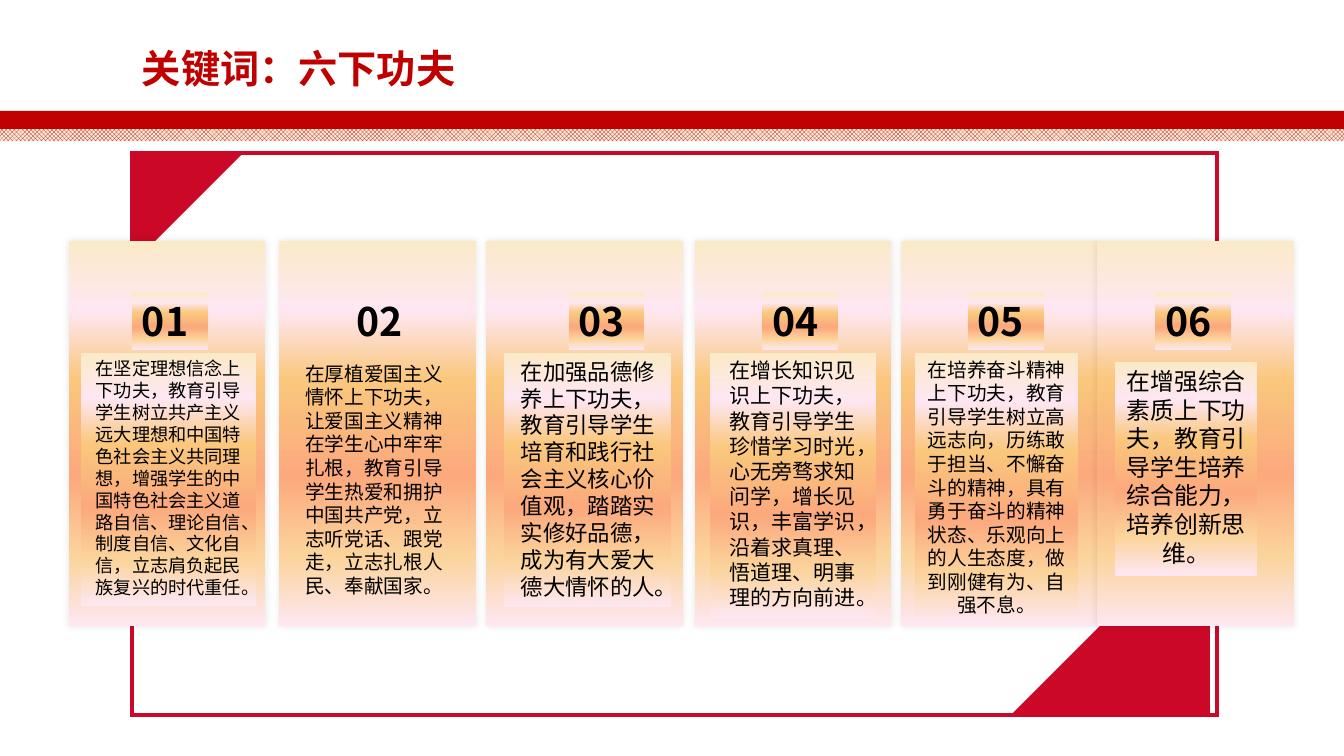
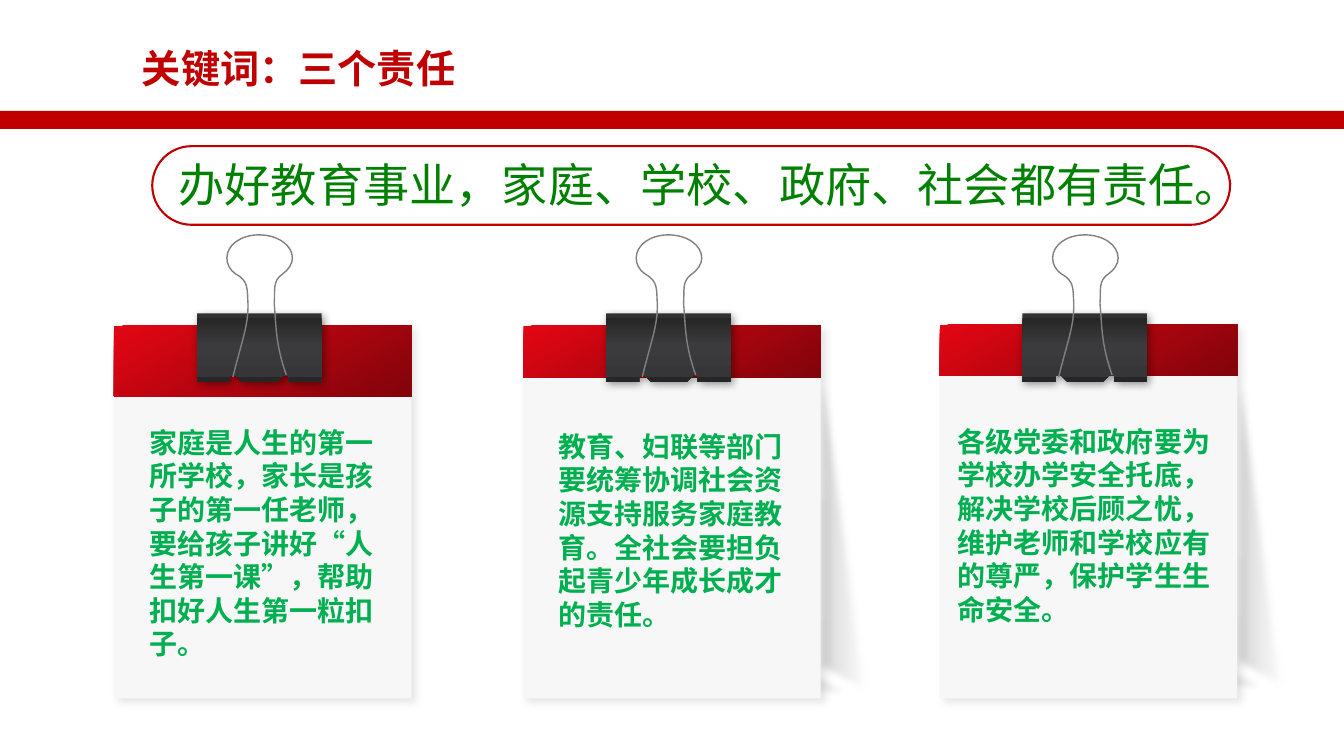
from lxml.etree import SubElement
from pptx import Presentation
from pptx.dml.color import RGBColor
from pptx.enum.dml import MSO_PATTERN
from pptx.enum.shapes import MSO_SHAPE
from pptx.enum.text import MSO_ANCHOR, MSO_AUTO_SIZE, PP_ALIGN
from pptx.oxml.ns import qn
from pptx.util import Inches, Pt

RED = RGBColor(0xC0, 0x00, 0x00)
CRIMSON = RGBColor(0xCB, 0x08, 0x28)
CREAM = RGBColor(0xF7, 0xED, 0xD8)
PAPER = RGBColor(0xF7, 0xF7, 0xF7)
GRAY = RGBColor(0x80, 0x80, 0x80)
PALE = RGBColor(0xF3, 0xF3, 0xF3)
BLACK = RGBColor(0x00, 0x00, 0x00)
GREEN = RGBColor(0x00, 0xB0, 0x50)
DARK_GREEN = RGBColor(0x00, 0x80, 0x00)

PEACH = RGBColor(0xFE, 0xE7, 0xF2)
SUNSET = [
    (0, RGBColor(0xFB, 0xEA, 0xC7)),
    (18, PEACH),
    (36, RGBColor(0xFA, 0xC7, 0x7D)),
    (61, RGBColor(0xFB, 0xA9, 0x7D)),
    (82, RGBColor(0xFB, 0xD4, 0x9C)),
    (100, PEACH),
]
HEADER = [(0, RGBColor(0xE3, 0x06, 0x13)), (100, RGBColor(0x81, 0x04, 0x0B))]
CHARCOAL = RGBColor(0x26, 0x26, 0x26)
METAL = [
    (7, RGBColor(0x31, 0x31, 0x32)),
    (7, CHARCOAL),
    (46, RGBColor(0x3B, 0x3B, 0x3D)),
    (93, RGBColor(0x36, 0x36, 0x38)),
    (93, CHARCOAL),
]
SHADE = [(0, PALE, 12), (100, GRAY, 44)]

CLIP = [
    (0, 0), (1.24, 0), (1.24, 0.68), (0.91, 0.68), (0.91, 0.62), (0.86, 0.62),
    (0.8, 0.68), (0.45, 0.68), (0.39, 0.62), (0.33, 0.62), (0.33, 0.68), (0, 0.68),
]
WIRE_START = (0.06, 1.41)
WIRE_CURVES = [
    ((0.16, 1.01), (0.21, 0.91), (0.21, 0.69)),
    ((0.2, 0.54), (0.22, 0.46), (0.09, 0.39)),
    ((0.03, 0.35), (0, 0.29), (0, 0.23)),
    ((0, 0.1), (0.14, 0), (0.32, 0)),
    ((0.5, 0), (0.65, 0.1), (0.65, 0.23)),
    ((0.65, 0.29), (0.61, 0.35), (0.55, 0.39)),
    ((0.45, 0.46), (0.48, 0.55), (0.47, 0.68)),
    ((0.49, 0.9), (0.48, 1.08), (0.59, 1.39)),
]

CARDS = [
    (0.68, (1.31, 2.9), (0.8, 3.5, 1.74, 2.51), 13, SUNSET,
     "在坚定理想信念上下功夫，教育引导学生树立共产主义远大理想和中国特色社会主义共同理想，增强学生的中国特色社会主义道路自信、理论自信、制度自信、文化自信，立志肩负起民族复兴的时代重任。"),
    (2.77, (3.44, 2.9), (2.87, 3.54, 1.68, 2.46), 14, None,
     "在厚植爱国主义情怀上下功夫，让爱国主义精神在学生心中牢牢扎根，教育引导学生热爱和拥护中国共产党，立志听党话、跟党走，立志扎根人民、奉献国家。"),
    (4.82, (5.64, 2.9), (5, 3.5, 1.66, 2.52), 16, SUNSET,
     "在加强品德修养上下功夫，教育引导学生培育和践行社会主义核心价值观，踏踏实实修好品德，成为有大爱大德大情怀的人。"),
    (6.89, (7.56, 2.9), (7.04, 3.5, 1.65, 2.63), 15, SUNSET,
     "在增长知识见识上下功夫，教育引导学生珍惜学习时光，心无旁骛求知问学，增长见识，丰富学识，沿着求真理、悟道理、明事理的方向前进。"),
    (8.94, (9.6, 2.9), (9.08, 3.5, 1.61, 2.69), 14, SUNSET,
     "在培养奋斗精神上下功夫，教育引导学生树立高远志向，历练敢于担当、不懈奋斗的精神，具有勇于奋斗的精神状态、乐观向上的人生态度，做到刚健有为、自强不息。"),
    (10.88, (11.46, 2.9), (11.06, 3.59, 1.41, 2.12), 17, SUNSET,
     "在增强综合素质上下功夫，教育引导学生培养综合能力，培养创新思维。"),
]

BOARDS = [
    (1.13, 3.23, 0.7, None, (1.38, 4.17, 2.51, 2.46),
     "家庭是人生的第一所学校，家长是孩子的第一任老师，要给孩子讲好“人生第一课”，帮助扣好人生第一粒扣子。"),
    (5.19, 3.23, 0.52, 6.64, (5.44, 4.21, 2.51, 2.12),
     "教育、妇联等部门要统筹协调社会资源支持服务家庭教育。全社会要担负起青少年成长成才的责任。"),
    (9.32, 3.22, 0.51, 6.59, (9.4, 4.16, 2.81, 2.12),
     "各级党委和政府要为学校办学安全托底，解决学校后顾之忧，维护老师和学校应有的尊严，保护学生生命安全。"),
]


def write(box, text, *, size, color, bold=False, font="Noto Sans CJK SC",
          align=PP_ALIGN.LEFT, anchor=MSO_ANCHOR.TOP, spacing=None, inset=None, grow=True):
    frame = box.text_frame
    frame.word_wrap = True
    frame.vertical_anchor = anchor
    frame.auto_size = MSO_AUTO_SIZE.SHAPE_TO_FIT_TEXT if grow else MSO_AUTO_SIZE.NONE
    if inset is not None:
        frame.margin_left = frame.margin_right = Inches(inset)
        frame.margin_top = frame.margin_bottom = Inches(inset)
    para = frame.paragraphs[0]
    para.alignment = align
    if spacing:
        para.line_spacing = spacing
    span = para.add_run()
    span.text = text
    span.font.size = Pt(size)
    span.font.bold = bold
    span.font.color.rgb = color
    span.font.name = font
    SubElement(span._r.get_or_add_rPr(), qn("a:ea"), typeface=font)


def add_color(parent, color, opacity):
    element = SubElement(parent, qn("a:srgbClr"), val=str(color))
    if opacity < 100:
        SubElement(element, qn("a:alpha"), val=str(opacity * 1000))


class Deck:
    def __init__(self):
        self.deck = Presentation()
        self.deck.slide_width = Inches(13.33)
        self.deck.slide_height = Inches(7.5)
        self.page = None

    def new_page(self, title, trellis=False):
        self.page = self.deck.slides.add_slide(self.deck.slide_layouts[6])
        if trellis:
            strip = self.shape((0, 1.27, 13.33, 0.13))
            strip.fill.patterned()
            strip.fill.pattern = MSO_PATTERN.TRELLIS
            strip.fill.fore_color.rgb = RED
            strip.fill.back_color.rgb = CREAM
        self.shape((0, 1.1, 13.33, 0.18), fill=RED)
        self.text((1.31, 0.44, 4.18, 0.49), title, size=28, color=RED, bold=True,
                  spacing=0.9, grow=False)

    def paint(self, box, fill=None, angle=90, line=None, width=1, shadow=None, soft=0):
        if fill is None:
            box.fill.background()
        elif isinstance(fill, RGBColor):
            box.fill.solid()
            box.fill.fore_color.rgb = fill
        else:
            box.fill.gradient()
            box.fill.gradient_angle = 360 - angle
            stops = box._element.spPr.find(qn("a:gradFill")).find(qn("a:gsLst"))
            for stop in list(stops):
                stops.remove(stop)
            for position, color, *opacity in fill:
                stop = SubElement(stops, qn("a:gs"), pos=str(position * 1000))
                add_color(stop, color, opacity[0] if opacity else 100)
        if line is None:
            box.line.fill.background()
        else:
            box.line.color.rgb = line
            box.line.width = Pt(width)
            SubElement(box._element.spPr.find(qn("a:ln")), qn("a:miter"), lim="800000")
        box.shadow.inherit = False
        effects = box._element.spPr.find(qn("a:effectLst"))
        if shadow:
            opacity, blur, distance, direction = shadow
            outer = SubElement(effects, qn("a:outerShdw"), blurRad=str(Pt(blur)),
                               dist=str(Pt(distance)), dir=str(direction * 60000),
                               algn="ctr", rotWithShape="0")
            add_color(outer, BLACK, opacity)
        if soft:
            SubElement(effects, qn("a:softEdge"), rad=str(Pt(soft)))
        return box

    def shape(self, place, kind=MSO_SHAPE.RECTANGLE, rotation=0, **style):
        box = self.page.shapes.add_shape(kind, *map(Inches, place))
        box.rotation = rotation
        return self.paint(box, **style)

    def outline(self, points, left=0, top=0, close=True, **style):
        corners = [(Inches(left + x), Inches(top + y)) for x, y in points]
        builder = self.page.shapes.build_freeform(*corners[0])
        builder.add_line_segments(corners[1:], close=close)
        return self.paint(builder.convert_to_shape(), **style)

    def wire(self, left, top):
        ends = [WIRE_START] + [curve[-1] for curve in WIRE_CURVES]
        box = self.outline(ends, left, top, close=False, line=GRAY)
        segments = list(box._element.spPr.iter(qn("a:lnTo")))
        for segment, curve in zip(segments, WIRE_CURVES):
            segment.tag = qn("a:cubicBezTo")
            for point in list(segment):
                segment.remove(point)
            for x, y in curve:
                SubElement(segment, qn("a:pt"), x=str(Inches(x)), y=str(Inches(y)))

    def text(self, place, text, fill=None, **style):
        if fill:
            box = self.shape(place, fill=fill)
        else:
            box = self.page.shapes.add_textbox(*map(Inches, place))
        write(box, text, **style)

    def card(self, number, left, number_at, text_at, size, fill, text):
        self.shape((left, 2.39, 1.95, 3.82), fill=SUNSET, shadow=(10, 5, 0, 0))
        self.text((*number_at, 0.75, 0.57), f"{number:02d}", fill=fill, size=28,
                  color=BLACK, bold=True)
        self.text(text_at, text, fill=fill, size=size, color=BLACK, align=PP_ALIGN.CENTER)

    def board(self, left, header_top, header, curl, text_at, text):
        if curl:
            self.outline([(2.91, curl + 0.03), (3.47, curl + 0.34), (2.93, 2.82)],
                         left, fill=SHADE, angle=180, soft=5)
            self.outline([(2.98, curl), (3.47, curl + 0.3), (-0.59, curl)],
                         left, fill=SHADE, soft=5)
        self.shape((left, 3.22, 2.95, 3.71), fill=PAPER, shadow=(10, 6, 4, 45))
        self.shape((left, header_top, 2.95, header), fill=HEADER, angle=60)
        self.outline(CLIP, left + 0.82, 3.11, fill=METAL, shadow=(40, 6, 2, 45))
        self.wire(left + 1.12, 2.33)
        self.text(text_at, text, size=20, color=GREEN, bold=True)


def main():
    deck = Deck()

    deck.new_page("关键词：六下功夫", trellis=True)
    deck.shape((10.01, 5.12, 1.99, 1.99), MSO_SHAPE.RIGHT_TRIANGLE, 270, fill=CRIMSON)
    deck.shape((1.33, 1.52, 1.08, 1.08), MSO_SHAPE.RIGHT_TRIANGLE, 90, fill=CRIMSON)
    deck.shape((1.31, 1.52, 10.76, 5.57), line=CRIMSON, width=3)
    for number, card in enumerate(CARDS, 1):
        deck.card(number, *card)

    deck.new_page("关键词：三个责任")
    for board in BOARDS:
        deck.board(*board)
    capsule = deck.shape((1.51, 1.45, 10.69, 0.78), MSO_SHAPE.ROUNDED_RECTANGLE,
                         line=RED, width=1.5)
    capsule.adjustments[0] = 0.5
    deck.text((1.77, 1.6, 10.17, 0.46), "办好教育事业，家庭、学校、政府、社会都有责任。",
              size=33, color=DARK_GREEN, font="Noto Sans CJK JP",
              anchor=MSO_ANCHOR.MIDDLE, inset=0, grow=False)

    deck.deck.save("out.pptx")


if __name__ == "__main__":
    main()
